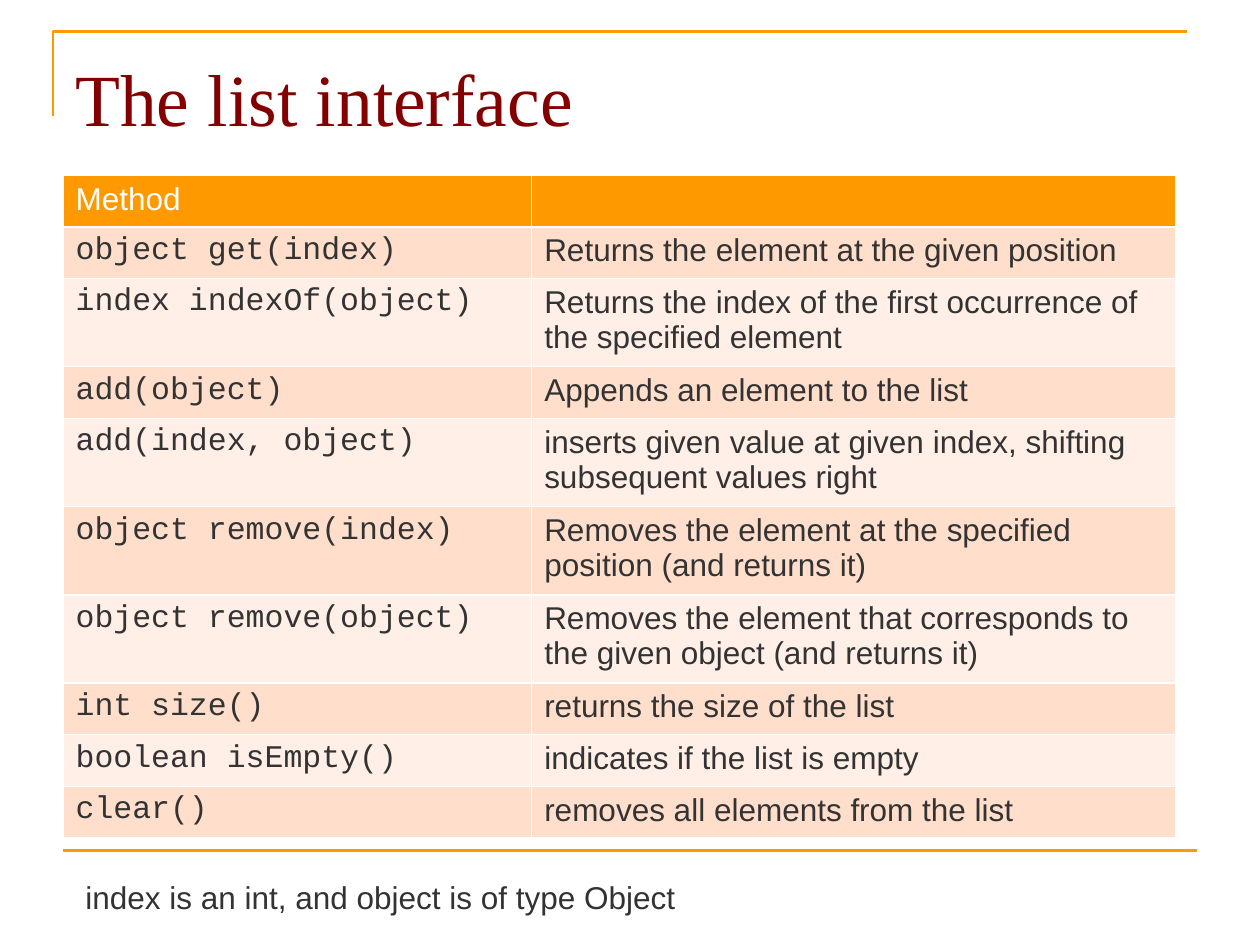
"""Build the slide that lists the methods of the list interface."""
from dataclasses import dataclass
from typing import NamedTuple

from lxml.etree import SubElement
from pptx import Presentation
from pptx.dml.color import RGBColor as Rgb
from pptx.enum.shapes import MSO_CONNECTOR as Link
from pptx.oxml.ns import qn
from pptx.util import Inches, Pt


class Font(NamedTuple):
    name: str
    size: int
    color: str


class Method(NamedTuple):
    call: str
    note: str


@dataclass(frozen=True)
class Theme:
    title: Font = Font("Times New Roman", 42, "820000")
    head: Font = Font("Arial", 18, "FFFFFF")
    code: Font = Font("Courier New", 18, "333333")
    body: Font = Font("Arial", 18, "333333")
    accent: str = "FF9900"
    bands: tuple[str, str] = ("FFDECC", "FFEFE7")
    rule: float = 1.5


THEME = Theme()
METHODS = [
    Method("object get(index)", "Returns the element at the given position"),
    Method("index indexOf(object)", "Returns the index of the first occurrence of the specified element"),
    Method("add(object)", "Appends an element to the list"),
    Method("add(index, object)", "inserts given value at given index, shifting subsequent values right"),
    Method("object remove(index)", "Removes the element at the specified position (and returns it)"),
    Method("object remove(object)", "Removes the element that corresponds to the given object (and returns it)"),
    Method("int size()", "returns the size of the list"),
    Method("boolean isEmpty()", "indicates if the list is empty"),
    Method("clear()", "removes all elements from the list"),
]


def write(frame, text: str, font: Font) -> None:
    frame.text = text
    for run in frame.paragraphs[0].runs:
        run.font.name = font.name
        run.font.size = Pt(font.size)
        run.font.bold = False
        run.font.color.rgb = Rgb.from_string(font.color)


def add_text(slide, box: tuple, text: str, font: Font, wrap: bool):
    frame = slide.shapes.add_textbox(*map(Inches, box)).text_frame
    frame.word_wrap = wrap
    write(frame, text, font)
    return frame


def stroke(line) -> None:
    line.color.rgb = Rgb.from_string(THEME.accent)
    line.width = Pt(THEME.rule)


def add_frame(slide) -> None:
    left, top, right = Inches(0.42), Inches(0.25), Inches(9.42)
    path = slide.shapes.build_freeform(left, Inches(0.92))
    path.add_line_segments([(left, top), (right, top)], close=False)
    corner = path.convert_to_shape()
    corner.shadow.inherit = False
    corner.fill.background()
    stroke(corner.line)
    y = Inches(6.75)
    rule = slide.shapes.add_connector(Link.STRAIGHT, Inches(0.5), y, Inches(9.5), y)
    SubElement(rule._element.spPr, qn("a:effectLst"))
    stroke(rule.line)


def fill_row(row, texts: Method, fonts: tuple[Font, Font], color: str) -> None:
    row.height = Inches(0.41)
    for cell, text, font in zip(row.cells, texts, fonts):
        cell.fill.solid()
        cell.fill.fore_color.rgb = Rgb.from_string(color)
        write(cell.text_frame, text, font)


def add_grid(slide) -> None:
    count = len(METHODS) + 1
    box = map(Inches, (0.5, 1.39, 8.83, 0.41 * count))
    table = slide.shapes.add_table(count, 2, *box).table
    for col, width in zip(table.columns, (3.72, 5.11)):
        col.width = Inches(width)
    fill_row(table.rows[0], Method("Method", ""), (THEME.head, THEME.head), THEME.accent)
    for i, method in enumerate(METHODS):
        fill_row(table.rows[i + 1], method, (THEME.code, THEME.body), THEME.bands[i % 2])


def main() -> None:
    deck = Presentation()
    deck.slide_width, deck.slide_height = Inches(10), Inches(7.5)
    slide = deck.slides.add_slide(deck.slide_layouts[6])
    add_frame(slide)
    title = add_text(slide, (0.5, 0.3, 9, 1.03), "The list interface", THEME.title, True)
    title.margin_top = Inches(0.12)
    add_grid(slide)
    note = "index is an int, and object is of type Object"
    add_text(slide, (0.58, 6.92, 4.93, 0.4), note, THEME.body, False)
    deck.save("out.pptx")


if __name__ == "__main__":
    main()
